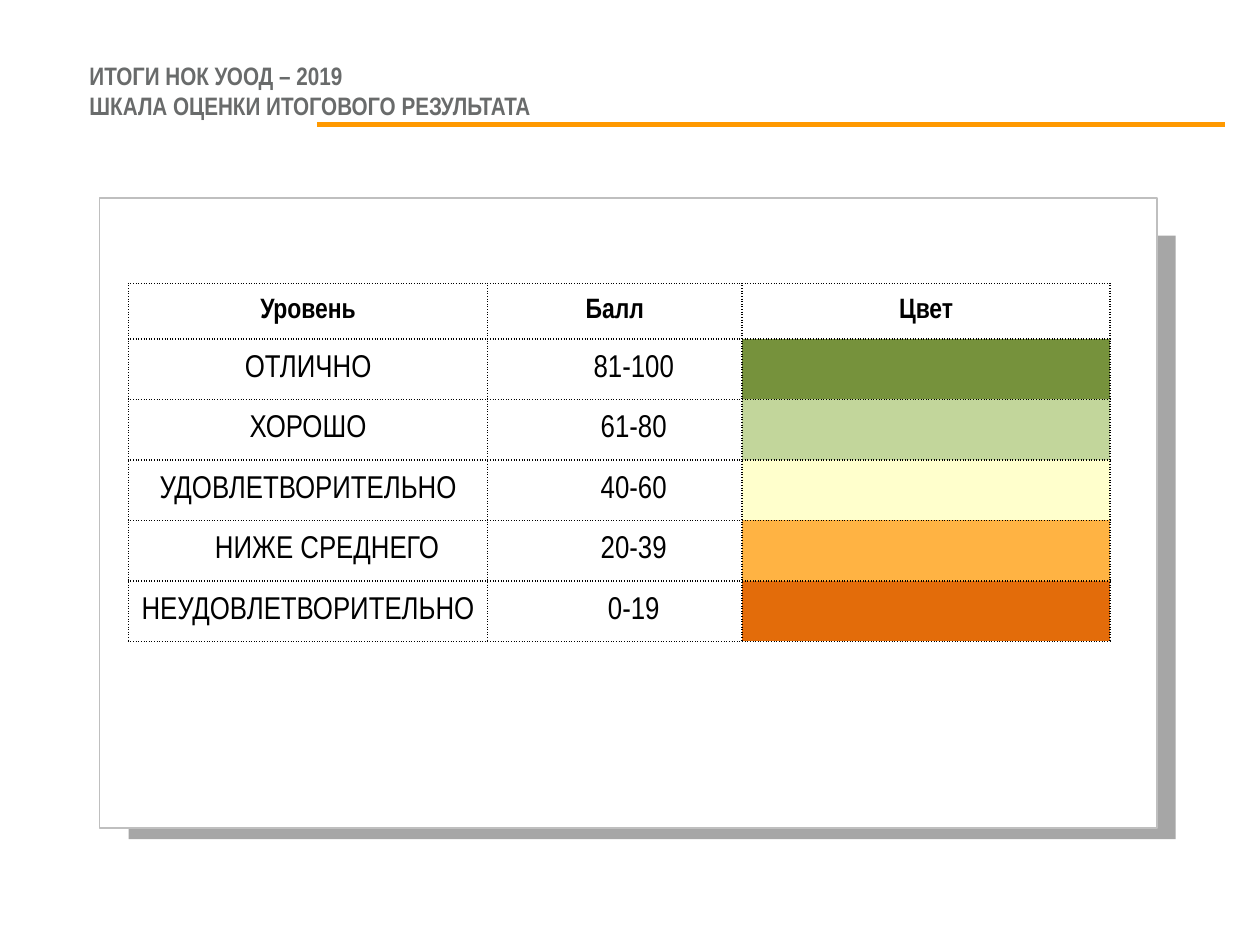
from dataclasses import dataclass

from lxml import etree
from pptx import Presentation
from pptx import util as u
from pptx.dml.color import RGBColor
from pptx.enum import shapes, text
from pptx.oxml import ns


@dataclass
class Theme:
    face: str = "Arial Narrow"
    ink: str = "000000"
    title: str = "696B6B"
    rule: str = "FF9900"
    paper: str = "FFFFFF"
    edge: str = "BFBFBF"
    shade: str = "A6A6A6"
    head_size: float = 14.4
    label_size: int = 16
    body_size: int = 18


theme = Theme()


def style(para, size, color, bold):
    font = para.font
    font.name, font.size, font.bold = theme.face, u.Pt(size), bold
    font.color.rgb = RGBColor.from_string(color)


def border(cell):
    """Put a dotted line on all four sides; call before the cell is filled."""
    props = cell._tc.get_or_add_tcPr()
    for side in ("lnL", "lnR", "lnT", "lnB"):
        line = etree.SubElement(props, ns.qn("a:" + side), w=str(u.Pt(1)))
        fill = etree.SubElement(line, ns.qn("a:solidFill"))
        etree.SubElement(fill, ns.qn("a:srgbClr"), val=theme.ink)
        etree.SubElement(line, ns.qn("a:prstDash"), val="dot")


prs = Presentation()
prs.slide_width, prs.slide_height = u.Inches(10), u.Inches(7.5)
slide = prs.slides.add_slide(prs.slide_layouts[5])

# Title
title = slide.shapes.title
title.left, title.top = u.Inches(0.61), u.Inches(0.43)
title.width, title.height = u.Inches(9), u.Inches(0.57)
frame = title.text_frame
frame.text = "ИТОГИ НОК УООД – 2019\vШКАЛА ОЦЕНКИ ИТОГОВОГО РЕЗУЛЬТАТА"
frame.vertical_anchor = text.MSO_ANCHOR.MIDDLE
frame.auto_size = text.MSO_AUTO_SIZE.NONE
frame.paragraphs[0].alignment = text.PP_ALIGN.LEFT
style(frame.paragraphs[0], theme.head_size, theme.title, True)

# Panel with its offset shade behind
panel = slide.shapes.add_group_shape()
for box, fill, edge in (
    ((1.02, 1.87, 8.31, 4.79), theme.shade, None),
    ((0.79, 1.57, 8.39, 5), theme.paper, theme.edge),
):
    rect = panel.shapes.add_shape(
        shapes.MSO_SHAPE.RECTANGLE, *[u.Inches(n) for n in box]
    )
    rect.shadow.inherit = False
    rect.fill.solid()
    rect.fill.fore_color.rgb = RGBColor.from_string(fill)
    if edge:
        rect.line.color.rgb = RGBColor.from_string(edge)
        rect.line.width = u.Pt(1)
    else:
        rect.line.fill.background()

# Rule under the title
rule = slide.shapes.add_connector(
    shapes.MSO_CONNECTOR.STRAIGHT,
    u.Inches(2.52), u.Inches(0.99), u.Inches(9.72), u.Inches(0.99),
)
rule.line.color.rgb = RGBColor.from_string(theme.rule)
rule.line.width = u.Pt(3)
etree.SubElement(rule._element.spPr, ns.qn("a:effectLst"))

# Rating scale
levels = [
    ("ОТЛИЧНО", "81-100", "76923C"),
    ("ХОРОШО", "61-80", "C2D69B"),
    ("УДОВЛЕТВОРИТЕЛЬНО", "40-60", "FFFFCC"),
    ("НИЖЕ СРЕДНЕГО", "20-39", "FFB343"),
    ("НЕУДОВЛЕТВОРИТЕЛЬНО", "0-19", "E36C0A"),
]
rows = [("Уровень", "Балл", "Цвет")] + levels
table = slide.shapes.add_table(
    len(rows), 3, u.Inches(1.02), u.Inches(2.25), u.Inches(7.79), u.Inches(2.84)
).table
table.first_row = table.horz_banding = False
for col, width in zip(table.columns, (2.85, 2.02, 2.92)):
    col.width = u.Inches(width)

for r, row in enumerate(rows):
    head = r == 0
    table.rows[r].height = u.Inches(0.44 if head else 0.48)
    for c, value in enumerate(row):
        cell = table.cell(r, c)
        border(cell)
        if c == 2 and not head:
            cell.fill.solid()
            cell.fill.fore_color.rgb = RGBColor.from_string(value)
            continue
        cell.fill.background()
        cell.vertical_anchor = text.MSO_ANCHOR.MIDDLE
        cell.margin_left = cell.margin_right = u.Inches(0.07)
        cell.margin_top = cell.margin_bottom = 0
        cell.text = value
        para = cell.text_frame.paragraphs[0]
        para.alignment = text.PP_ALIGN.CENTER
        para.space_before = para.space_after = u.Pt(6)
        style(para, theme.label_size if head else theme.body_size, theme.ink, head)
        if not head and (c == 1 or value == "НИЖЕ СРЕДНЕГО"):
            para._p.get_or_add_pPr().set("indent", str(u.Inches(0.3)))

prs.save("out.pptx")
